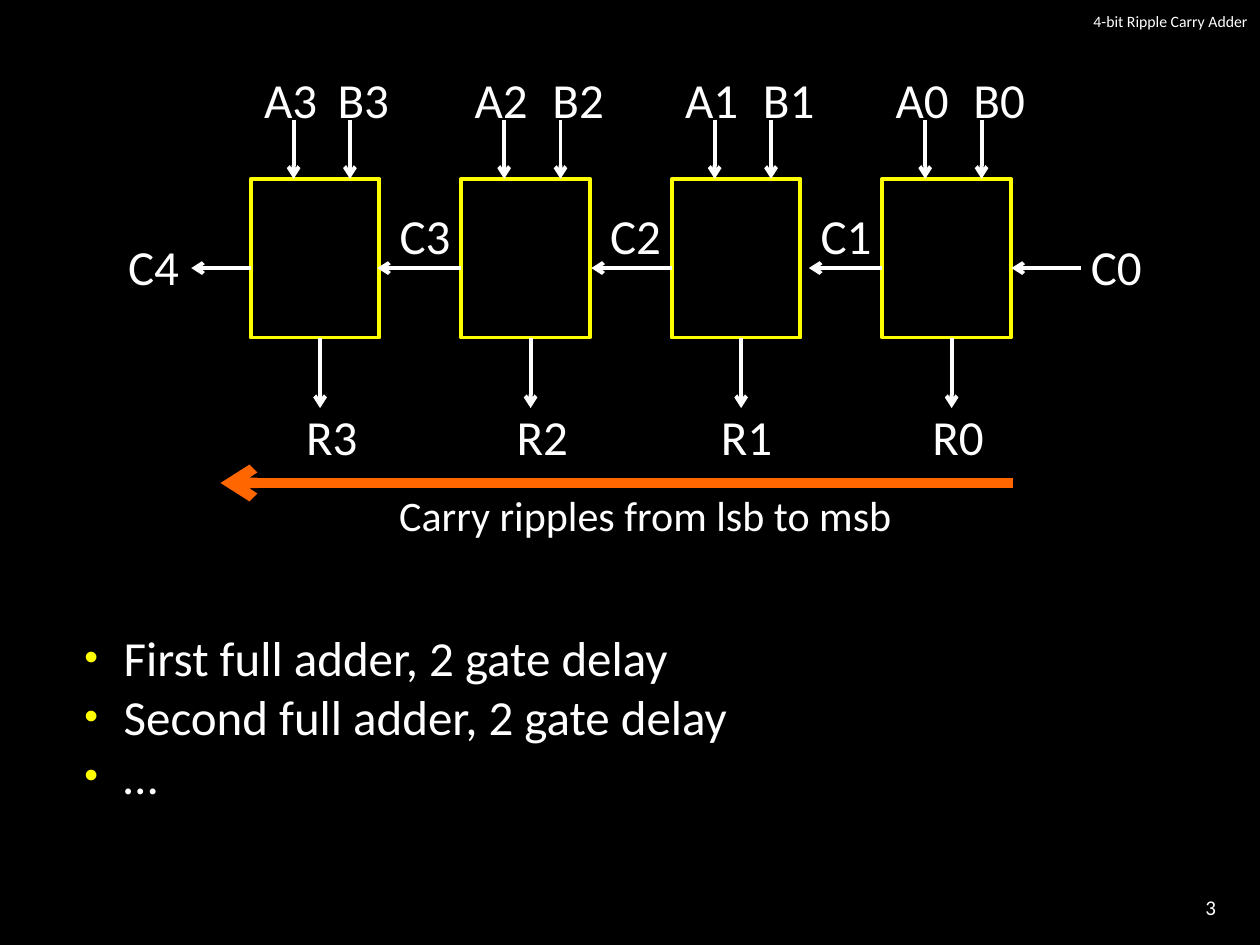
from lxml import etree
from pptx import Presentation
from pptx.dml.color import RGBColor
from pptx.enum.shapes import MSO_CONNECTOR, MSO_SHAPE
from pptx.enum.text import MSO_ANCHOR, MSO_AUTO_SIZE, PP_ALIGN
from pptx.oxml.ns import qn
from pptx.util import Pt

BLACK = RGBColor(0, 0, 0)
WHITE = RGBColor(255, 255, 255)
YELLOW = RGBColor(255, 255, 0)
ORANGE = RGBColor(255, 102, 0)
LEFT, RIGHT = PP_ALIGN.LEFT, PP_ALIGN.RIGHT
TOP, MIDDLE = MSO_ANCHOR.TOP, MSO_ANCHOR.MIDDLE
RECT, LINE = MSO_SHAPE.RECTANGLE, MSO_CONNECTOR.STRAIGHT
NO_FIT = MSO_AUTO_SIZE.NONE

FONT = "Calibri"
BOX_X, PITCH = 143.3, 120.3
BOX_Y, BOX_W, BOX_H = 102.2, 73.5, 90.7
WIRE_Y = 153.2
# Bit, left of B label, left of result label, length of carry arrow
ADDERS = [
    (3, 42.5, 24.5, 34),
    (2, 45, 24.5, 48),
    (1, 45, 21, 46),
    (0, 45, 21.5, 42),
]
POINTS = ["First full adder, 2 gate delay",
          "Second full adder, 2 gate delay", "…"]


def place(shape, x, y, w, h):
    shape.left, shape.top = Pt(x), Pt(y)
    shape.width, shape.height = Pt(w), Pt(h)


def write(shape, *lines, size=28, align=LEFT, anchor=TOP, wrap=False):
    """Fill a shape with one paragraph for each line."""
    frame = shape.text_frame
    frame.text = "\n".join(lines)
    frame.word_wrap = wrap
    frame.auto_size = NO_FIT
    frame.vertical_anchor = anchor
    for para in frame.paragraphs:
        para.alignment = align
        para.space_before = Pt(0)
        font = para.runs[0].font
        font.name, font.size = FONT, Pt(size)
        font.color.rgb = WHITE


def label(slide, text, x, y, w=45, h=41, **style):
    box = slide.shapes.add_textbox(Pt(x), Pt(y), Pt(w), Pt(h))
    write(box, text, **style)


def arrow(slide, x1, y1, x2, y2, color=WHITE, width=2.25):
    wire = slide.shapes.add_connector(LINE, Pt(x1), Pt(y1), Pt(x2), Pt(y2))
    wire.line.color.rgb = color
    wire.line.width = Pt(width)
    tail = etree.SubElement(wire.line._get_or_add_ln(), qn("a:tailEnd"))
    tail.set("type", "arrow")
    etree.SubElement(wire._element.spPr, qn("a:effectLst"))


def bullet(para):
    props = para._p.get_or_add_pPr()
    props.set("marL", str(Pt(22.5)))
    props.set("indent", str(-Pt(22.5)))
    color = etree.SubElement(props, qn("a:buClr"))
    etree.SubElement(color, qn("a:srgbClr")).set("val", str(YELLOW))
    etree.SubElement(props, qn("a:buSzPct")).set("val", "80000")
    etree.SubElement(props, qn("a:buFont")).set("typeface", "Arial")
    etree.SubElement(props, qn("a:buChar")).set("char", "•")


def adder(slide, x, bit, b_left, r_left, reach):
    """Draw one full adder with its inputs, result and carry out."""
    box = slide.shapes.add_shape(RECT, Pt(x), Pt(BOX_Y), Pt(BOX_W), Pt(BOX_H))
    box.shadow.inherit = False
    box.fill.background()
    box.line.color.rgb = YELLOW
    box.line.width = Pt(2.25)
    for dx in (24.5, 56.7):
        arrow(slide, x + dx, 68.5, x + dx, BOX_Y)
    base = BOX_Y + BOX_H
    arrow(slide, x + 39.6, base, x + 39.6, base + 40.3)
    arrow(slide, x, WIRE_Y, x - reach, WIRE_Y)
    label(slide, f"A{bit}", x + 0.5, 36)
    label(slide, f"B{bit}", x + b_left, 36)
    label(slide, f"R{bit}", x + r_left, 229)
    if bit < 3:
        label(slide, f"C{bit + 1}", x - 42.3, 113.8)


def main():
    deck = Presentation()
    deck.slide_width, deck.slide_height = Pt(720), Pt(540)
    slide = deck.slides.add_slide(deck.slide_layouts[1])
    fill = slide.background.fill
    fill.solid()
    fill.fore_color.rgb = BLACK

    title, body = slide.placeholders
    place(title, 444, 0, 276, 24)
    write(title, "4-bit Ripple Carry Adder", size=9, align=RIGHT,
          anchor=MIDDLE, wrap=True)
    place(body, 41, 355, 596, 109)
    write(body, *POINTS, wrap=True)
    for para in body.text_frame.paragraphs:
        bullet(para)

    for col, spec in enumerate(ADDERS):
        adder(slide, BOX_X + col * PITCH, *spec)
    arrow(slide, 617.8, WIRE_Y, 578, WIRE_Y)
    label(slide, "C4", 66.2, 131.8)
    label(slide, "C0", 616.3, 131.8)

    arrow(slide, 579, 276, 126, 276, color=ORANGE, width=6)
    label(slide, "Carry ripples from lsb to msb", 221, 276, 298, 36, size=24)
    label(slide, "3", 642, 504, 60, 29, size=12, align=RIGHT,
          anchor=MIDDLE, wrap=True)
    deck.save("out.pptx")


if __name__ == "__main__":
    main()
